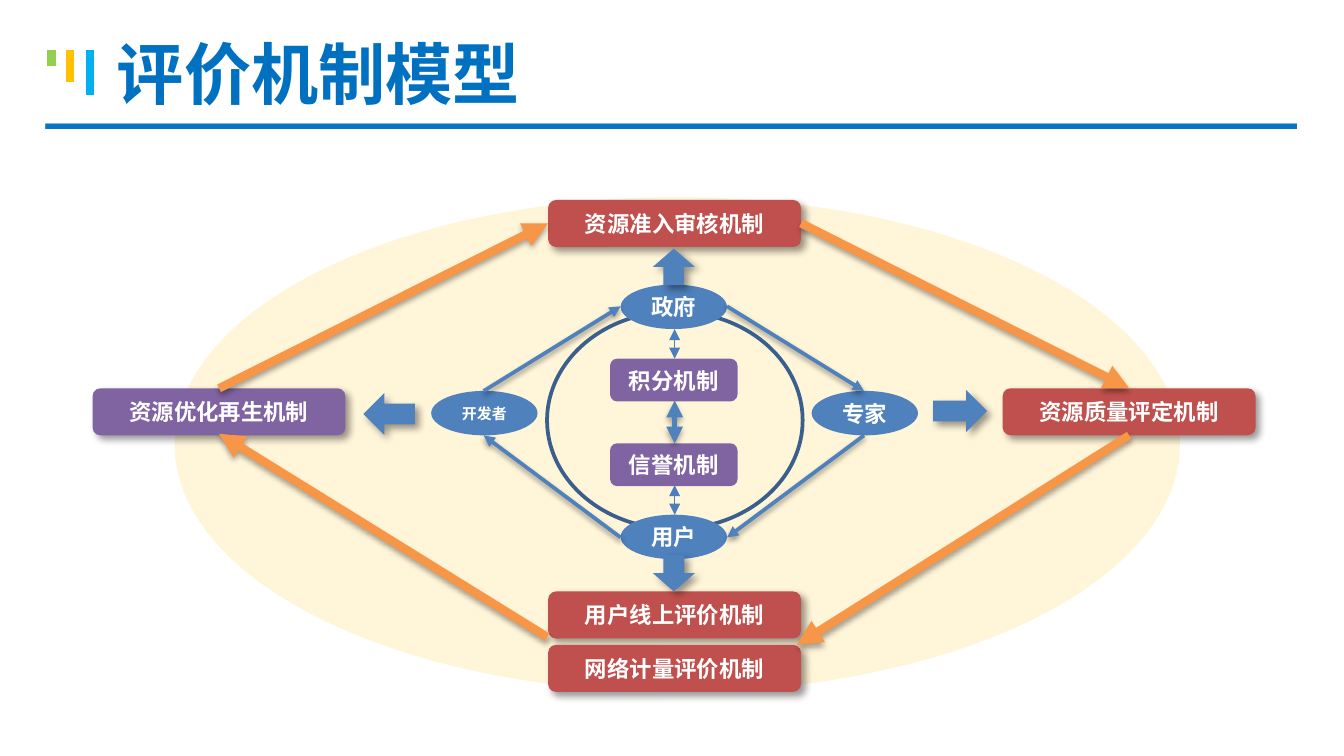
from lxml import etree
from pptx import Presentation
from pptx.dml.color import RGBColor
from pptx.enum.shapes import MSO_CONNECTOR, MSO_SHAPE
from pptx.enum.text import MSO_ANCHOR, MSO_AUTO_SIZE, PP_ALIGN
from pptx.oxml.ns import qn
from pptx.util import Cm, Pt

RECT, ROUND = MSO_SHAPE.RECTANGLE, MSO_SHAPE.ROUNDED_RECTANGLE
OVAL, UP_ARROW = MSO_SHAPE.OVAL, MSO_SHAPE.UP_ARROW
STRAIGHT = MSO_CONNECTOR.STRAIGHT
MIDDLE, NO_FIT = MSO_ANCHOR.MIDDLE, MSO_AUTO_SIZE.NONE
LEFT, CENTER = PP_ALIGN.LEFT, PP_ALIGN.CENTER
FONT = "Noto Sans CJK SC"
COLORS = {
    "title": "0070C0", "sky": "00B0F0", "amber": "FFC000", "lime": "92D050",
    "blue": "4F81BD", "thin": "4B7EBC", "ring": "3A5F8C", "red": "C0504D",
    "purple": "8064A2", "orange": "F79646", "white": "FFFFFF", "black": "000000",
}
# Shadows: opacity %, blur pt, distance pt, direction in degrees
BOX_SHADOW = (40, 4, 3, 45)
CYCLE_SHADOW = (35, 3.1, 1.8, 90)
ROLE_SHADOW = (38, 3.1, 1.6, 90)


class SlideBuilder:
    def __init__(self, slide):
        self.slide = slide

    def color(self, name):
        return RGBColor.from_string(COLORS[name])

    def opacity(self, color_element, percent):
        etree.SubElement(color_element, qn("a:alpha"), val=str(percent * 1000))

    def shadow(self, effects, values):
        percent, blur, distance, angle = values
        outer = etree.SubElement(
            effects, qn("a:outerShdw"), blurRad=str(Pt(blur)),
            dist=str(Pt(distance)), dir=str(angle * 60000), rotWithShape="0")
        color = etree.SubElement(outer, qn("a:srgbClr"), val=COLORS["black"])
        self.opacity(color, percent)

    def text(self, shape, words, size, color, align, inset=0):
        frame = shape.text_frame
        layout = {"word_wrap": True, "auto_size": NO_FIT, "vertical_anchor": MIDDLE,
                  "margin_left": Cm(inset), "margin_right": Cm(inset),
                  "margin_top": 0, "margin_bottom": 0}
        for name, value in layout.items():
            setattr(frame, name, value)
        para = frame.paragraphs[0]
        para.alignment = align
        span = para.add_run()
        span.text = words
        for name, value in {"name": FONT, "size": Pt(size), "bold": True}.items():
            setattr(span.font, name, value)
        span.font.color.rgb = self.color(color)
        etree.SubElement(span.font._element, qn("a:ea"), typeface=FONT)

    def title(self, words, left, top, width, height):
        box = self.slide.shapes.title
        place = {"left": left, "top": top, "width": width, "height": height}
        for name, value in place.items():
            setattr(box, name, Cm(value))
        self.text(box, words, 36, "title", LEFT, 0.38)

    def shape(self, kind, left, top, width, height, fill=None, opacity=None,
              line=None, shadow=None, words=None, size=12, rotation=0):
        box = self.slide.shapes.add_shape(
            kind, Cm(left), Cm(top), Cm(width), Cm(height))
        box.rotation = rotation
        box.shadow.inherit = False
        if fill:
            box.fill.solid()
            box.fill.fore_color.rgb = self.color(fill)
        else:
            box.fill.background()
        if opacity:
            self.opacity(box._element.spPr.find(".//" + qn("a:srgbClr")), opacity)
        if line:
            box.line.color.rgb = self.color(line)
            box.line.width = Pt(2)
        else:
            box.line.fill.background()
        if shadow:
            self.shadow(box._element.spPr.find(qn("a:effectLst")), shadow)
        if words:
            self.text(box, words, size, "white", CENTER)

    def line(self, start, end, color, width, heads=(), shadow=None):
        line = self.slide.shapes.add_connector(
            STRAIGHT, *(Cm(value) for value in (*start, *end)))
        line.line.color.rgb = self.color(color)
        line.line.width = Pt(width)
        properties = line._element.spPr
        for head in heads:
            etree.SubElement(properties.find(qn("a:ln")), qn(head), type="triangle")
        effects = etree.SubElement(properties, qn("a:effectLst"))
        if shadow:
            self.shadow(effects, shadow)


def main():
    deck = Presentation()
    deck.slide_width, deck.slide_height = Cm(25.4), Cm(14.29)
    page = SlideBuilder(deck.slides.add_slide(deck.slide_layouts[5]))
    one_head, two_heads = ("a:tailEnd",), ("a:headEnd", "a:tailEnd")

    # Title with its tick marks and doubled rule
    for _ in range(2):
        page.shape(RECT, 0.86, 2.34, 23.65, 0.1, "title", opacity=81)
    for x, bottom, color in ((1.7, 1.8, "sky"), (1.32, 1.55, "amber"),
                             (0.97, 1.24, "lime")):
        page.line((x, 0.94), (x, bottom), color, 4.5)
    page.title("评价机制模型", 1.83, 0.1, 23.57, 2.54)

    # Background oval and inner ring
    page.shape(OVAL, 3.3, 3.73, 19, 9.35, "amber", opacity=15)
    page.shape(OVAL, 10.34, 5.89, 4.83, 4.11, line="ring")

    # Roles around the ring
    for words, left, top, size in (("政府", 11.73, 5.38, 12), ("专家", 15.34, 7.39, 12),
                                   ("用户", 11.73, 9.73, 12), ("开发者", 8.15, 7.39, 8)):
        page.shape(OVAL, left, top, 2.01, 0.84, "blue", words=words, size=size)

    # Inner mechanisms
    for words, top in (("积分机制", 6.78), ("信誉机制", 8.38)):
        page.shape(ROUND, 11.53, top, 2.41, 0.81, "purple", words=words)

    # Outer mechanisms
    for words, left, top, fill in (
            ("资源准入审核机制", 10.36, 3.78, "red"),
            ("资源质量评定机制", 18.95, 7.34, "red"),
            ("用户线上评价机制", 10.36, 11.18, "red"),
            ("网络计量评价机制", 10.36, 12.19, "red"),
            ("资源优化再生机制", 1.75, 7.34, "purple")):
        page.shape(ROUND, left, top, 4.78, 0.89, fill, shadow=BOX_SHADOW, words=words)

    # Block arrows from roles to mechanisms
    for left, top, height, rotation in ((12.34, 4.7, 0.69, 0), (17.75, 7.26, 1.02, 90),
                                        (12.34, 10.49, 0.69, 180), (6.96, 7.34, 0.97, 270)):
        page.shape(UP_ARROW, left, top, 0.79, height, "blue",
                   shadow=BOX_SHADOW, rotation=rotation)

    # Two-way links on the centre axis
    axis = 12.75
    page.line((axis, 7.57), (axis, 8.38), "blue", 3, two_heads, CYCLE_SHADOW)
    for start, end in ((6.78, 6.22), (9.17, 9.73)):
        page.line((axis, start), (axis, end), "thin", 0.75, two_heads)

    # Outer cycle of mechanisms, then inner cycle of roles
    outer = (((15.14, 4.22), (21.34, 7.34)), ((21.34, 8.23), (15.06, 12.19)),
             ((10.34, 12.04), (4.14, 8.2)), ((4.14, 7.34), (10.36, 4.22)))
    inner = (((13.74, 5.79), (16.33, 7.39)), ((16.33, 8.23), (13.74, 10.16)),
             ((11.73, 10.16), (9.14, 8.23)), ((9.14, 7.39), (11.73, 5.79)))
    for cycle, color, width, shadow in ((outer, "orange", 4.5, CYCLE_SHADOW),
                                        (inner, "blue", 2, ROLE_SHADOW)):
        for start, end in cycle:
            page.line(start, end, color, width, one_head, shadow)

    deck.save("out.pptx")


if __name__ == "__main__":
    main()
